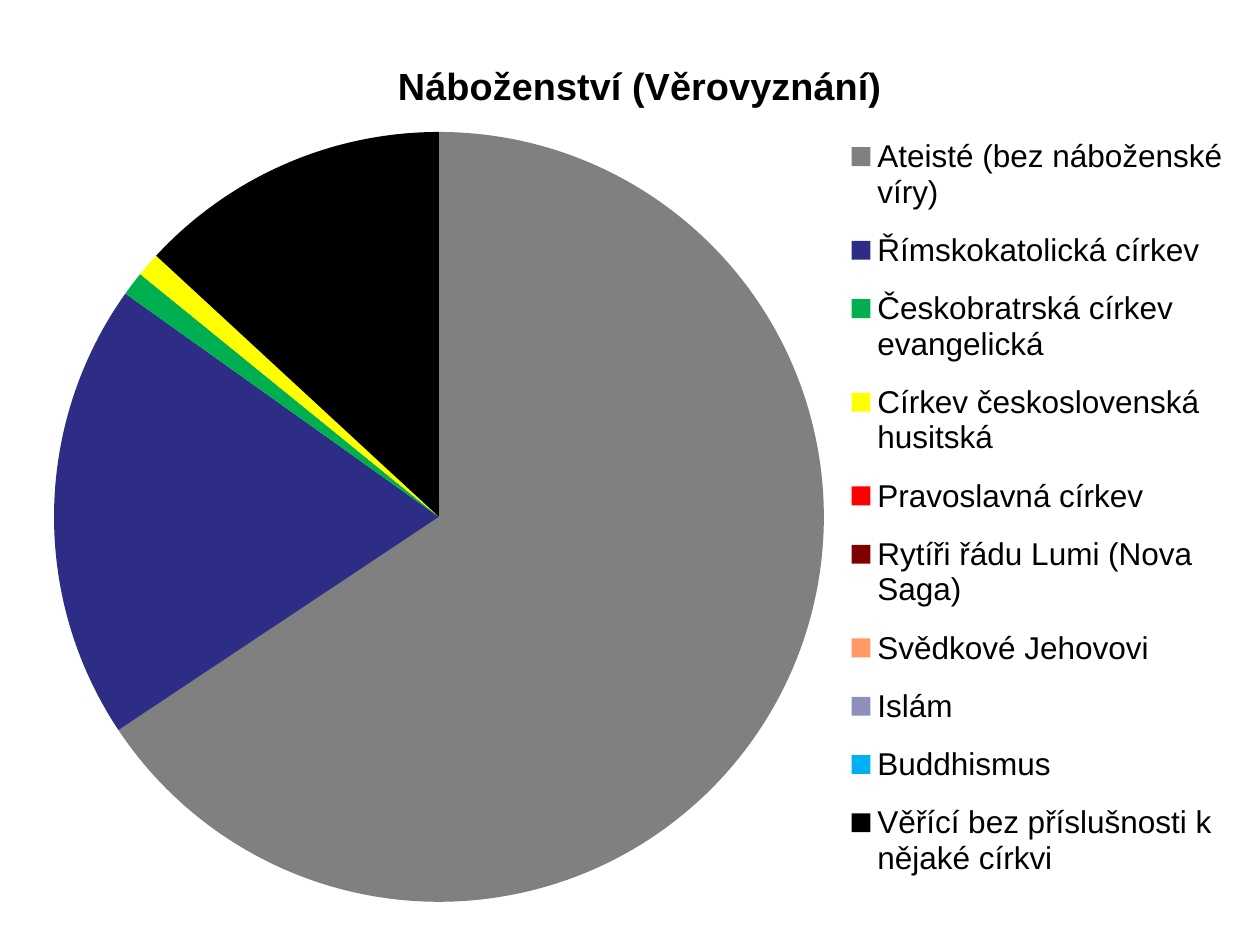
import pptx
import pptx.chart.data
import pptx.dml.color
import pptx.enum.chart
import pptx.oxml
import pptx.oxml.ns
import pptx.util

TITLE = "Náboženství (Věrovyznání)"
FAITHS = [
    ("Ateisté (bez náboženské víry)", 65, "gray"),
    ("Římskokatolická církev", 19, "navy"),
    ("Českobratrská církev evangelická", 1, "green"),
    ("Církev československá husitská", 1, "yellow"),
    ("Pravoslavná církev", 0, "red"),
    ("Rytíři řádu Lumi (Nova Saga)", 0, "maroon"),
    ("Svědkové Jehovovi", 0, "orange"),
    ("Islám", 0, "lavender"),
    ("Buddhismus", 0, "sky"),
    ("Věřící bez příslušnosti k nějaké církvi", 13, "black"),
]
COLORS = {
    "gray": "808080", "navy": "2D2D86", "green": "00B050",
    "yellow": "FFFF00", "red": "FF0000", "maroon": "800000",
    "orange": "FF9966", "lavender": "8F8FBB", "sky": "00B0F0",
    "black": "000000",
}
PX = 914400 // 126
CHART_BOX = (35, 37, 1211, 883)
TITLE_BOX = (391, 55)
PIE_BOX = (54, 132, 770, 770)
LEGEND_BOX = (842, 116, 390, 783)


def rgb(name):
    return pptx.dml.color.RGBColor.from_string(COLORS[name])


def layout_xml(box, inner=False):
    left, top, width, height = CHART_BOX
    fractions = [(box[0] - left) / width, (box[1] - top) / height]
    if len(box) == 4:
        fractions += [box[2] / width, box[3] / height]
    tags = '<c:layoutTarget val="inner"/>' if inner else ""
    tags += '<c:xMode val="edge"/><c:yMode val="edge"/>'
    for tag, fraction in zip("xywh", fractions):
        tags += f'<c:{tag} val="{fraction:.4f}"/>'
    namespace = pptx.oxml.ns.nsdecls("c")
    return pptx.oxml.parse_xml(
        f"<c:layout {namespace}><c:manualLayout>{tags}</c:manualLayout></c:layout>")


def place(parent, box, position, inner=False):
    for old in parent.findall(pptx.oxml.ns.qn("c:layout")):
        parent.remove(old)
    parent.insert(position, layout_xml(box, inner))


def style(font, size, bold=False):
    font.name = "Arial"
    font.size = pptx.util.Pt(size)
    font.bold = bold
    font.color.rgb = rgb("black")


def main():
    deck = pptx.Presentation()
    deck.slide_width = pptx.util.Inches(10)
    deck.slide_height = pptx.util.Inches(7.5)
    slide = deck.slides.add_slide(deck.slide_layouts[6])

    data = pptx.chart.data.CategoryChartData()
    data.categories = [faith for faith, share, color in FAITHS]
    data.add_series("Series 1", [share for faith, share, color in FAITHS])
    religions = slide.shapes.add_chart(
        pptx.enum.chart.XL_CHART_TYPE.PIE,
        *(length * PX for length in CHART_BOX), data).chart
    style(religions.font, 18)

    religions.has_title = True
    heading = religions.chart_title
    heading.text_frame.text = TITLE
    style(heading.text_frame.paragraphs[0].runs[0].font, 21.6, True)
    heading.include_in_layout = False
    place(heading._element, TITLE_BOX, 1)

    religions.has_legend = True
    religions.legend.position = pptx.enum.chart.XL_LEGEND_POSITION.RIGHT
    religions.legend.include_in_layout = False
    style(religions.legend.font, 18)
    place(religions.legend._element, LEGEND_BOX, 1)

    pie = religions.plots[0]
    pie.vary_by_categories = True
    place(pie._element.getparent(), PIE_BOX, 0, inner=True)
    for index, (faith, share, color) in enumerate(FAITHS):
        slice_format = pie.series[0].points[index].format
        slice_format.fill.solid()
        slice_format.fill.fore_color.rgb = rgb(color)
        slice_format.line.fill.background()

    deck.save("out.pptx")


if __name__ == "__main__":
    main()
